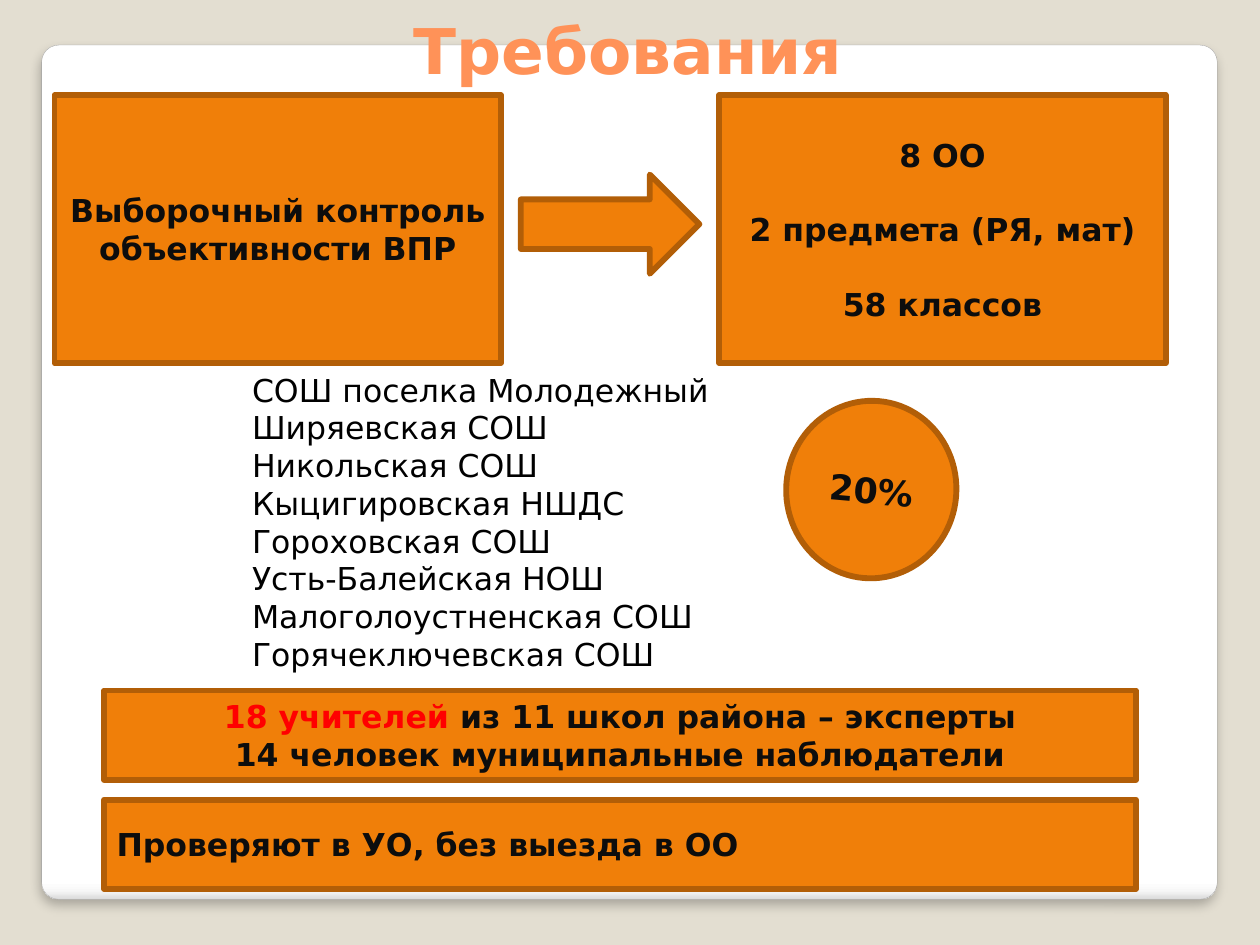
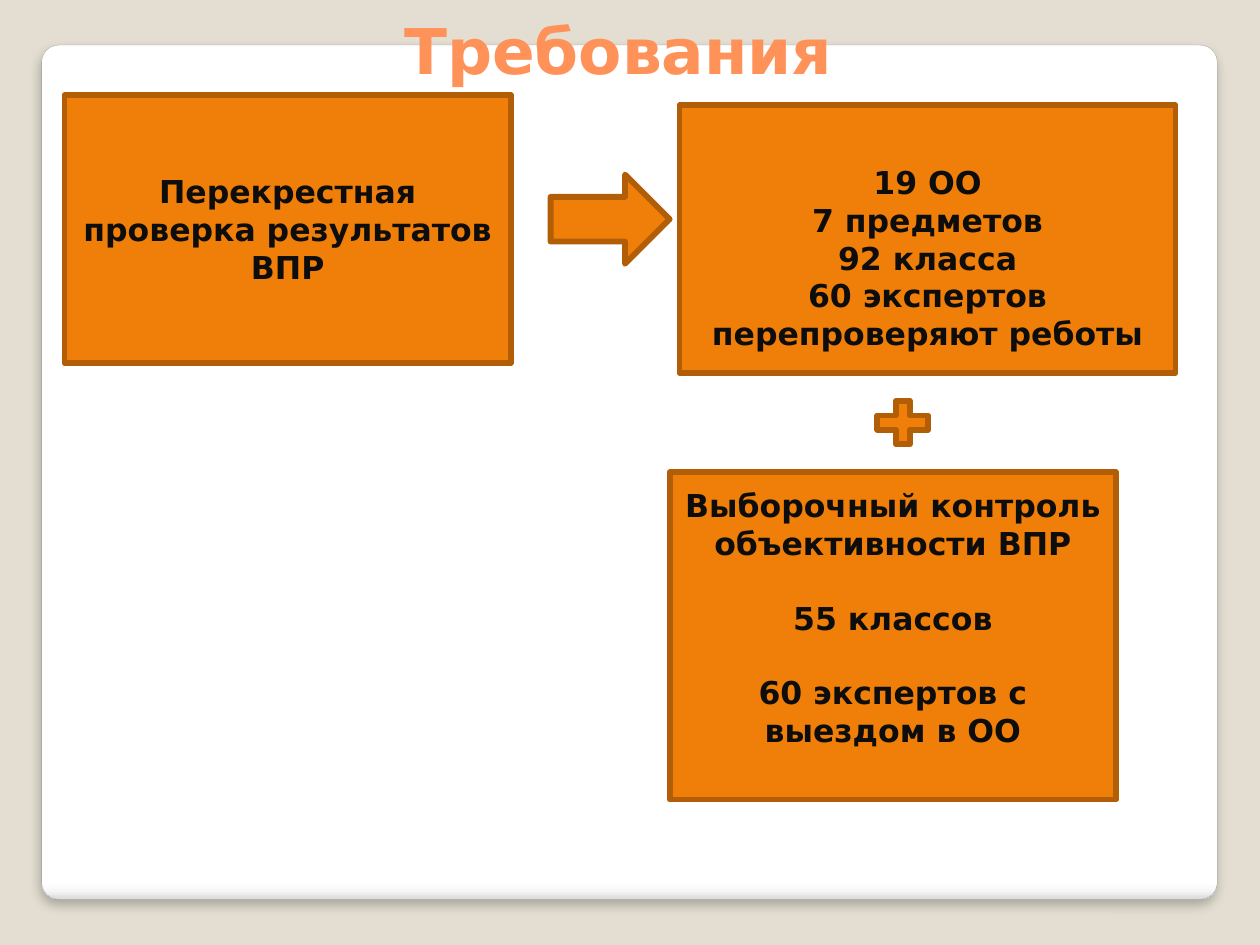
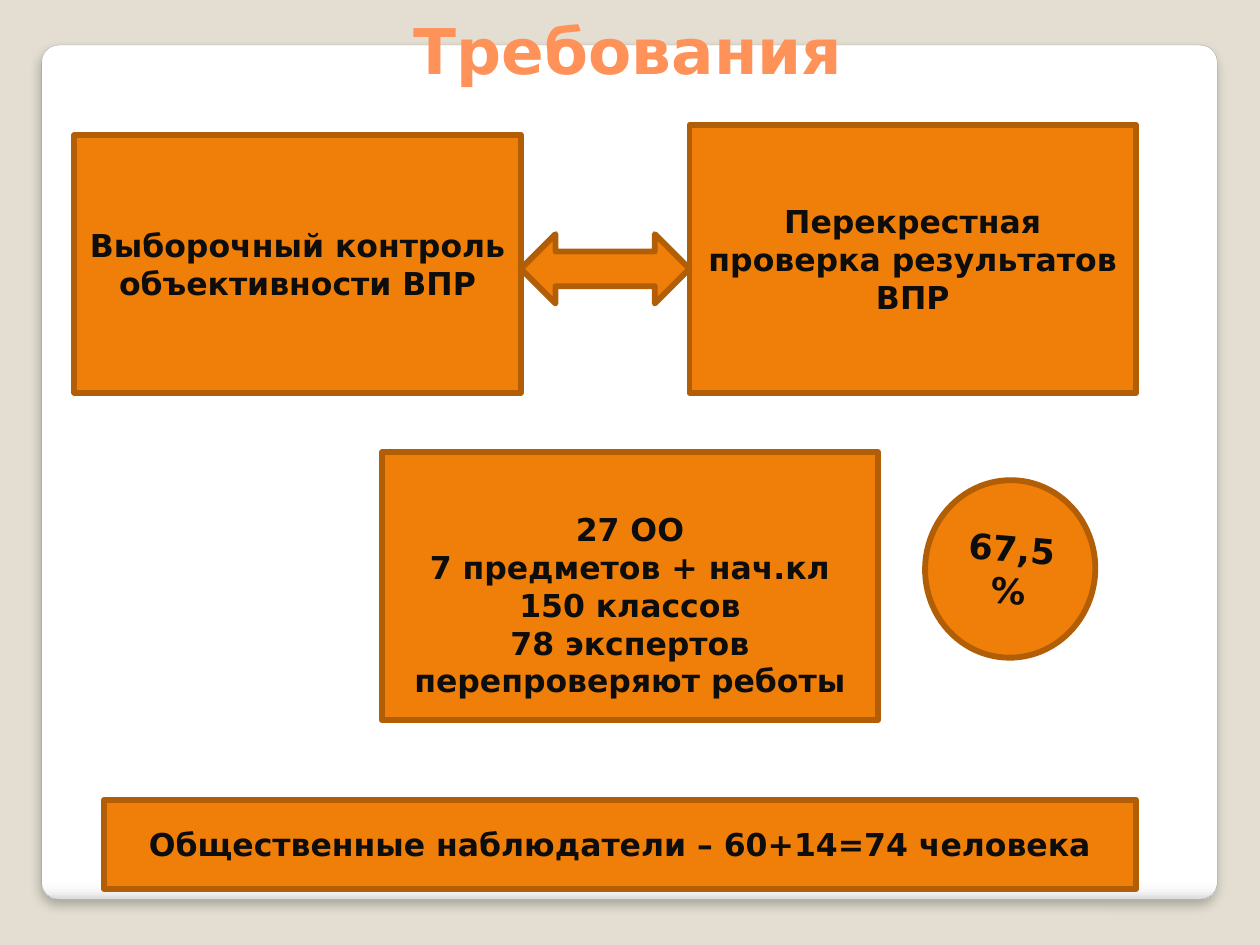
import lxml.etree as etree
import pptx
import pptx.dml.color
import pptx.enum.shapes
import pptx.enum.text
import pptx.oxml.ns
import pptx.util

Cm = pptx.util.Cm
Pt = pptx.util.Pt
RGBColor = pptx.dml.color.RGBColor
SHAPE = pptx.enum.shapes.MSO_SHAPE
ALIGN = pptx.enum.text.PP_ALIGN
ANCHOR = pptx.enum.text.MSO_ANCHOR
qn = pptx.oxml.ns.qn

FONT = "DejaVu Sans"
BEIGE = RGBColor(0xE3, 0xDE, 0xD1)
GREY = RGBColor(0xA4, 0xA4, 0xA4)
ORANGE = RGBColor(0xF0, 0x7F, 0x09)
BROWN = RGBColor(0xB2, 0x5E, 0x07)
CORAL = RGBColor(0xFF, 0x92, 0x58)
INK = RGBColor(0x0D, 0x0D, 0x0D)
BLACK = RGBColor(0, 0, 0)
RED = RGBColor(0xFF, 0, 0)
PANEL_STOPS = [(0, "FFFFFF"), (98, "FFFFFF"), (99, "F7F7F7"), (100, "DADADA")]

BOX_W, BOX_H = 9, 5.4
WIDE_W = 10
BAR_X, BAR_W, BAR_H = 2.1, 20.8, 1.8
LAST_BAR_Y = 16.12
INSET = 0.13
LINE = 0.74  # height of one 18 pt line

CONTROL = "Выборочный контроль объективности ВПР"
CROSS_CHECK = "Перекрестная проверка результатов ВПР"
SCHOOLS = [
    "СОШ поселка Молодежный",
    "Ширяевская СОШ",
    "Никольская СОШ",
    "Кыцигировская НШДС",
    "Гороховская СОШ",
    "Усть-Балейская НОШ",
    "Малоголоустненская СОШ",
    "Горячеключевская СОШ",
]


def add_run(p, text, size=18, color=INK, bold=True):
    r = p.add_run()
    r.text = text
    r.font.name = FONT
    r.font.size = Pt(size)
    r.font.bold = bold
    r.font.color.rgb = color


def add_panel(prs, layout):
    """Put the white rounded panel behind everything on the layout."""
    shapes = prs.slides[0].shapes
    sp = shapes.add_shape(SHAPE.ROUNDED_RECTANGLE, Cm(0.84), Cm(0.91), Cm(23.7), Cm(17.22))
    sp.adjustments[0] = 0.02
    sp.line.color.rgb = GREY
    sp.line.width = Pt(0.16)
    sp.fill.gradient()
    sp.fill.gradient_angle = 270
    sp.shadow.inherit = False
    sp_pr = sp.element.spPr

    stops = sp_pr.find(".//" + qn("a:gsLst"))
    for stop in list(stops):
        stops.remove(stop)
    for pos, color in PANEL_STOPS:
        stop = etree.SubElement(stops, qn("a:gs"), pos=str(pos * 1000))
        etree.SubElement(stop, qn("a:srgbClr"), val=color)

    shadow = etree.SubElement(
        sp_pr.find(qn("a:effectLst")), qn("a:outerShdw"),
        blurRad=str(Pt(6)), dist=str(Pt(4)), dir="5400000", rotWithShape="0")
    color = etree.SubElement(shadow, qn("a:srgbClr"), val="000000")
    etree.SubElement(color, qn("a:alpha"), val="25000")
    layout.shapes.element.insert(2, sp.element)


def add_slide(prs, layout, title_x=1.3):
    slide = prs.slides.add_slide(layout)
    title = slide.shapes.title
    title.left, title.top, title.width, title.height = Cm(title_x), 0, Cm(22.73), Cm(2)
    tf = title.text_frame
    tf.auto_size = pptx.enum.text.MSO_AUTO_SIZE.NONE
    tf.vertical_anchor = ANCHOR.MIDDLE
    p = tf.paragraphs[0]
    p.alignment = ALIGN.CENTER
    add_run(p, "Требования", 36, CORAL)
    return slide


def add_figure(slide, kind, x, y, w, h):
    sp = slide.shapes.add_shape(kind, Cm(x), Cm(y), Cm(w), Cm(h))
    sp.shadow.inherit = False
    sp.fill.solid()
    sp.fill.fore_color.rgb = ORANGE
    sp.line.color.rgb = BROWN
    sp.line.width = Pt(3.35)
    return sp


def write(sp, paragraphs, size=18, align=ALIGN.CENTER, gaps=()):
    """Fill a shape; gaps lists the paragraphs that have one line of space before."""
    tf = sp.text_frame
    tf.word_wrap = True
    tf.vertical_anchor = ANCHOR.MIDDLE
    for i, content in enumerate(paragraphs):
        p = tf.paragraphs[0] if i == 0 else tf.add_paragraph()
        p.alignment = align
        if i in gaps:
            p.space_before = Pt(21)
        for text, color in [(content, INK)] if isinstance(content, str) else content:
            add_run(p, text, size, color)


def add_box(slide, x, y, paragraphs, w=BOX_W, h=BOX_H, gaps=(), top=0, bottom=0):
    """Add a box; top and bottom are extra inner margins."""
    sp = add_figure(slide, SHAPE.RECTANGLE, x, y, w, h)
    sp.text_frame.margin_top = Cm(INSET + top)
    sp.text_frame.margin_bottom = Cm(INSET + bottom)
    write(sp, paragraphs, gaps=gaps)


def add_bar(slide, y, paragraphs, align=ALIGN.CENTER):
    write(add_figure(slide, SHAPE.RECTANGLE, BAR_X, y, BAR_W, BAR_H), paragraphs, align=align)


def add_share(slide, x, y, text):
    sp = add_figure(slide, SHAPE.OVAL, x, y, 3.43, 3.58)
    sp.rotation = 4.9
    write(sp, [text], size=20)


def add_school_table(slide, x, y, w, row_h):
    frame = slide.shapes.add_table(
        len(SCHOOLS), 1, Cm(x), Cm(y), Cm(w), Cm(row_h * len(SCHOOLS)))
    table = frame.table
    table.first_row = table.horz_banding = False
    for row, school in zip(table.rows, SCHOOLS):
        row.height = Cm(row_h)
        cell = row.cells[0]
        cell.fill.background()
        cell.margin_left = cell.margin_right = Cm(0.18)
        cell.margin_top = cell.margin_bottom = 0
        add_run(cell.text_frame.paragraphs[0], school, color=BLACK, bold=False)


def build_selective_control(slide):
    add_box(slide, 1.1, 1.92, [CONTROL])
    add_box(slide, 14.5, 1.92, ["8 ОО", "2 предмета (РЯ, мат)", "58 классов"], gaps=(1, 2))
    add_figure(slide, SHAPE.RIGHT_ARROW, 10.5, 3.52, 3.6, 2)
    add_school_table(slide, 4.9, 7.52, 16.93, 0.76)
    add_share(slide, 15.85, 8.08, "20%")
    add_bar(slide, 13.92, [
        [("18 учителей ", RED), ("из 11 школ района – эксперты", INK)],
        "14 человек муниципальные наблюдатели",
    ])
    add_bar(slide, LAST_BAR_Y, ["Проверяют в УО, без выезда в ОО"], ALIGN.LEFT)


def build_cross_check(slide):
    add_box(slide, 1.3, 1.92, [CROSS_CHECK])
    add_box(slide, 13.7, 2.12,
            ["19 ОО", "7 предметов", "92 класса", "60 экспертов перепроверяют реботы"],
            w=WIDE_W, top=LINE)
    add_figure(slide, SHAPE.RIGHT_ARROW, 11.1, 3.52, 2.4, 1.8)
    add_box(slide, 13.5, 9.52,
            [CONTROL, "55 классов", "60 экспертов с выездом в ОО"],
            h=6.6, gaps=(1, 2), bottom=LINE)
    add_figure(slide, SHAPE.MATH_PLUS, 17.5, 7.92, 1.4, 1.2)


def build_summary(slide):
    add_box(slide, 1.5, 2.72, [CONTROL], h=5.2)
    add_box(slide, 13.9, 2.52, [CROSS_CHECK])
    add_figure(slide, SHAPE.LEFT_RIGHT_ARROW, 10.5, 4.72, 3.4, 1.4)
    add_box(slide, 7.7, 9.12,
            ["27 ОО", "7 предметов + нач.кл", "150 классов",
             "78 экспертов перепроверяют реботы"],
            w=WIDE_W, top=LINE)
    add_share(slide, 18.65, 9.68, "67,5%")
    add_bar(slide, LAST_BAR_Y, ["Общественные наблюдатели – 60+14=74 человека"])


def main():
    prs = pptx.Presentation()
    prs.slide_width, prs.slide_height = Cm(25.4), Cm(19.05)
    layout = prs.slide_layouts.get_by_name("Title Only")
    fill = prs.slide_master.background.fill
    fill.solid()
    fill.fore_color.rgb = BEIGE

    build_selective_control(add_slide(prs, layout))
    build_cross_check(add_slide(prs, layout, title_x=1.1))
    build_summary(add_slide(prs, layout))
    add_panel(prs, layout)
    prs.save("out.pptx")


if __name__ == "__main__":
    main()
